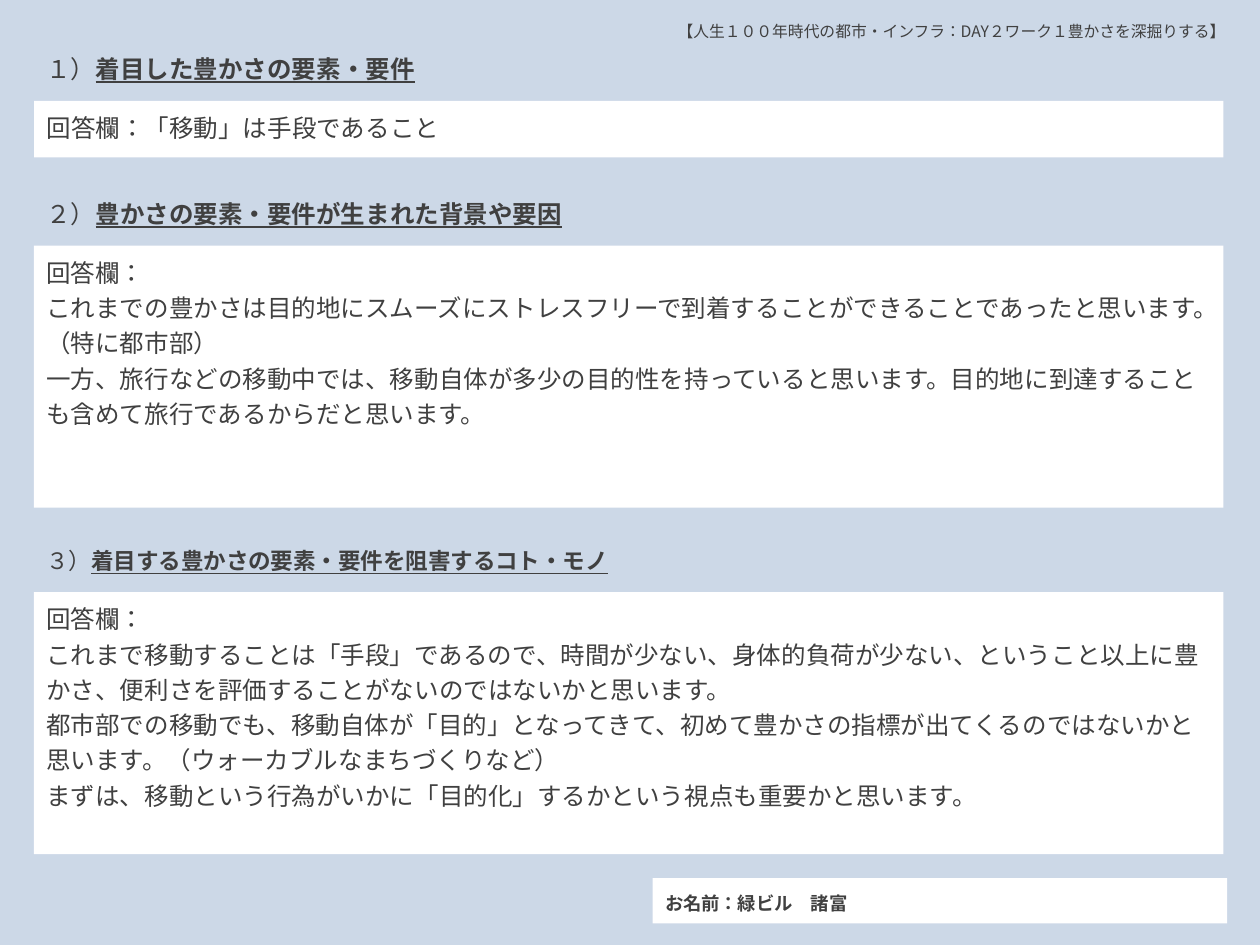
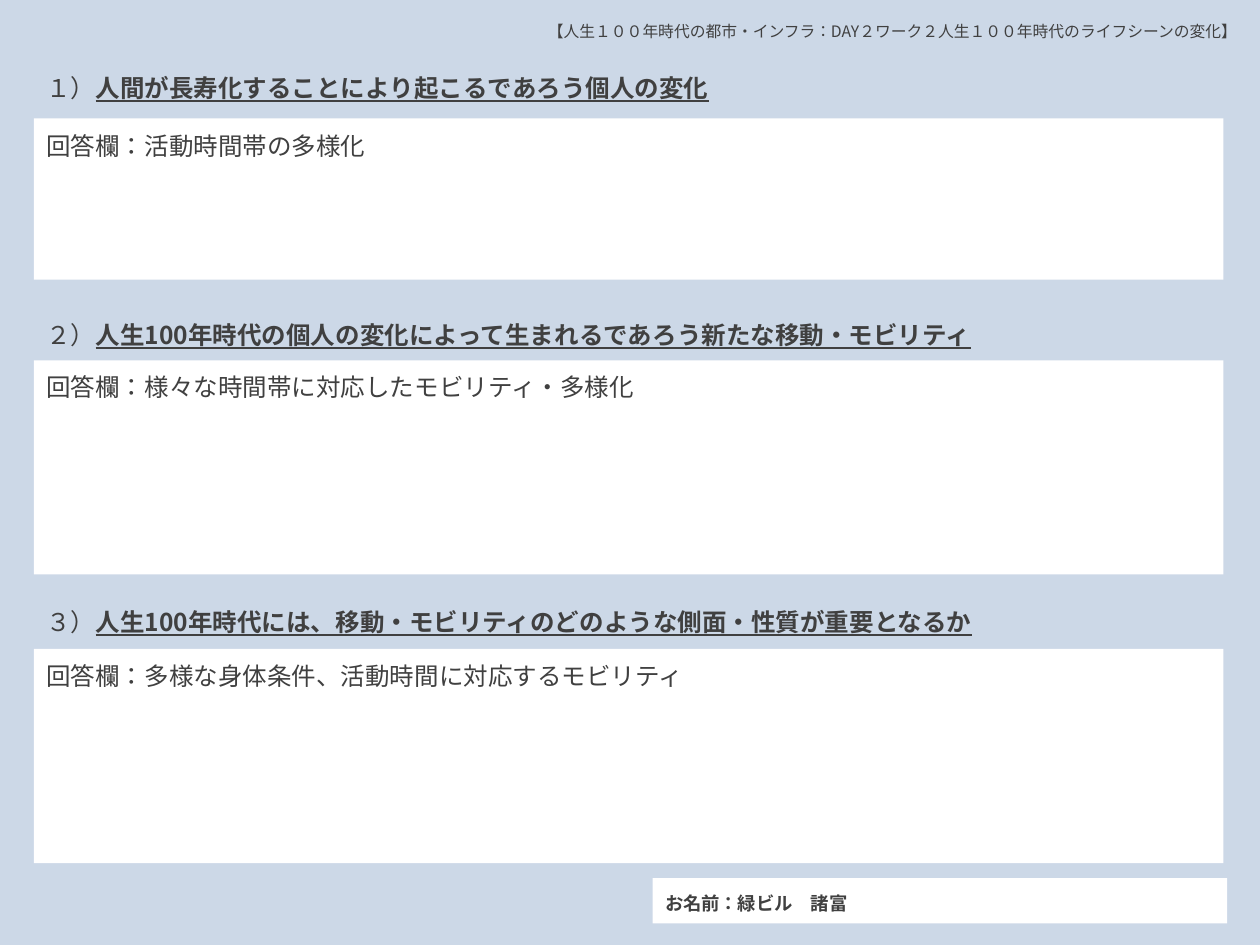
import pptx
import pptx.dml.color
import pptx.enum.lang
import pptx.enum.shapes
import pptx.enum.text
import pptx.oxml.ns
import pptx.util
from lxml import etree

Inches = pptx.util.Inches
FONT = "Noto Sans CJK JP"
BACKGROUND, PANEL, INK = "CCD8E7", "FFFFFF", "404040"
LEFT, PANEL_WIDTH = 0.27, 9.44
TITLE_ONLY, BLANK = 5, 6


def colour(value):
    return pptx.dml.color.RGBColor.from_string(value)


def add_text(paragraph, text, size=14, bold=False, underline=False):
    """Add one formatted run to a paragraph."""
    run = paragraph.add_run()
    run.text = text
    font = run.font
    font.size = pptx.util.Pt(size)
    font.bold = bold
    font.underline = underline
    font.color.rgb = colour(INK)
    font.language_id = pptx.enum.lang.MSO_LANGUAGE_ID.JAPANESE
    font.name = FONT
    # East Asian characters take their own typeface element
    properties = run._r.get_or_add_rPr()
    etree.SubElement(properties, pptx.oxml.ns.qn("a:ea"), typeface=FONT)


class Worksheet:
    """Style of the worksheet slides, and the slide being built."""

    def __init__(self, presentation):
        self.presentation = presentation
        self.slide = None

    def start(self, layout):
        layouts = self.presentation.slide_layouts
        self.slide = self.presentation.slides.add_slide(layouts[layout])
        fill = self.slide.background.fill
        fill.solid()
        fill.fore_color.rgb = colour(BACKGROUND)

    def prepare(self, shape, anchor=pptx.enum.text.MSO_ANCHOR.TOP):
        frame = shape.text_frame
        frame.word_wrap = True
        frame.auto_size = pptx.enum.text.MSO_AUTO_SIZE.NONE
        frame.vertical_anchor = anchor
        return frame

    def paragraph(self, frame, first=True):
        paragraph = frame.paragraphs[0] if first else frame.add_paragraph()
        paragraph.alignment = pptx.enum.text.PP_ALIGN.LEFT
        paragraph.line_spacing = 1.2
        return paragraph

    def paint(self, shape):
        shape.fill.solid()
        shape.fill.fore_color.rgb = colour(PANEL)
        shape.line.fill.background()

    def label(self, left, top, width, height):
        box = self.slide.shapes.add_textbox(
            Inches(left), Inches(top), Inches(width), Inches(height))
        return self.paragraph(self.prepare(box))

    def panel(self, left, top, width, height):
        shape = self.slide.shapes.add_shape(
            pptx.enum.shapes.MSO_SHAPE.RECTANGLE,
            Inches(left), Inches(top), Inches(width), Inches(height))
        shape.shadow.inherit = False
        self.paint(shape)
        return shape

    def header(self, left, width, text):
        add_text(self.label(left, 0.09, width, 0.3), text, size=9)

    def heading(self, top, width, number, text, size=14):
        paragraph = self.label(LEFT, top, width, 0.45)
        add_text(paragraph, number, size=size)
        add_text(paragraph, text, size=size, bold=True, underline=True)

    def answer(self, top, height, lines):
        frame = self.prepare(self.panel(LEFT, top, PANEL_WIDTH, height))
        for index, line in enumerate(lines):
            add_text(self.paragraph(frame, index == 0), line)

    def title_answer(self, top, height, text):
        title = self.slide.shapes.title
        title.left, title.top = Inches(LEFT), Inches(top)
        title.width, title.height = Inches(PANEL_WIDTH), Inches(height)
        self.paint(title)
        add_text(self.paragraph(self.prepare(title)), text)

    def name_field(self):
        shape = self.panel(5.18, 6.97, 4.56, 0.36)
        frame = self.prepare(shape, pptx.enum.text.MSO_ANCHOR.MIDDLE)
        add_text(self.paragraph(frame), "お名前：緑ビル　諸富", size=10.5, bold=True)


def build_richness(sheet):
    sheet.start(TITLE_ONLY)
    sheet.header(5.28, 4.83, "【人生１００年時代の都市・インフラ：DAY２ワーク１豊かさを深掘りする】")
    # Element in focus
    sheet.heading(0.33, 3.21, "１）", "着目した豊かさの要素・要件")
    sheet.title_answer(0.8, 0.45, "回答欄：「移動」は手段であること")
    # Background
    sheet.heading(1.48, 4.77, "２）", "豊かさの要素・要件が生まれた背景や要因")
    sheet.answer(1.95, 2.08, [
        "回答欄：",
        "これまでの豊かさは目的地にスムーズにストレスフリーで到着することができることであったと思います。",
        "（特に都市部）",
        "一方、旅行などの移動中では、移動自体が多少の目的性を持っていると思います。"
        "目的地に到達することも含めて旅行であるからだと思います。",
    ])
    # Obstacles
    sheet.heading(4.25, 4.84, "３）", "着目する豊かさの要素・要件を阻害するコト・モノ", size=12.9)
    sheet.answer(4.7, 2.08, [
        "回答欄：",
        "これまで移動することは「手段」であるので、時間が少ない、身体的負荷が少ない、"
        "ということ以上に豊かさ、便利さを評価することがないのではないかと思います。",
        "都市部での移動でも、移動自体が「目的」となってきて、"
        "初めて豊かさの指標が出てくるのではないかと思います。（ウォーカブルなまちづくりなど）",
        "まずは、移動という行為がいかに「目的化」するかという視点も重要かと思います。",
    ])
    sheet.name_field()


def build_life_scenes(sheet):
    sheet.start(BLANK)
    sheet.header(4.25, 5.75, "【人生１００年時代の都市・インフラ：DAY２ワーク２人生１００年時代のライフシーンの変化】")
    # Change in individuals
    sheet.heading(0.48, 5.6, "１）", "人間が長寿化することにより起こるであろう個人の変化")
    sheet.answer(0.94, 1.28, ["回答欄：活動時間帯の多様化"])
    # New mobility
    sheet.heading(2.44, 8.38, "２）", "人生100年時代の個人の変化によって生まれるであろう新たな移動・モビリティ")
    sheet.answer(2.86, 1.7, ["回答欄：様々な時間帯に対応したモビリティ・多様化"])
    # Qualities that matter
    sheet.heading(4.72, 8.38, "３）", "人生100年時代には、移動・モビリティのどのような側面・性質が重要となるか")
    sheet.answer(5.15, 1.7, ["回答欄：多様な身体条件、活動時間に対応するモビリティ"])
    sheet.name_field()


def main():
    presentation = pptx.Presentation()
    presentation.slide_width = Inches(10)
    presentation.slide_height = Inches(7.5)
    sheet = Worksheet(presentation)
    build_richness(sheet)
    build_life_scenes(sheet)
    presentation.save("out.pptx")


if __name__ == "__main__":
    main()
